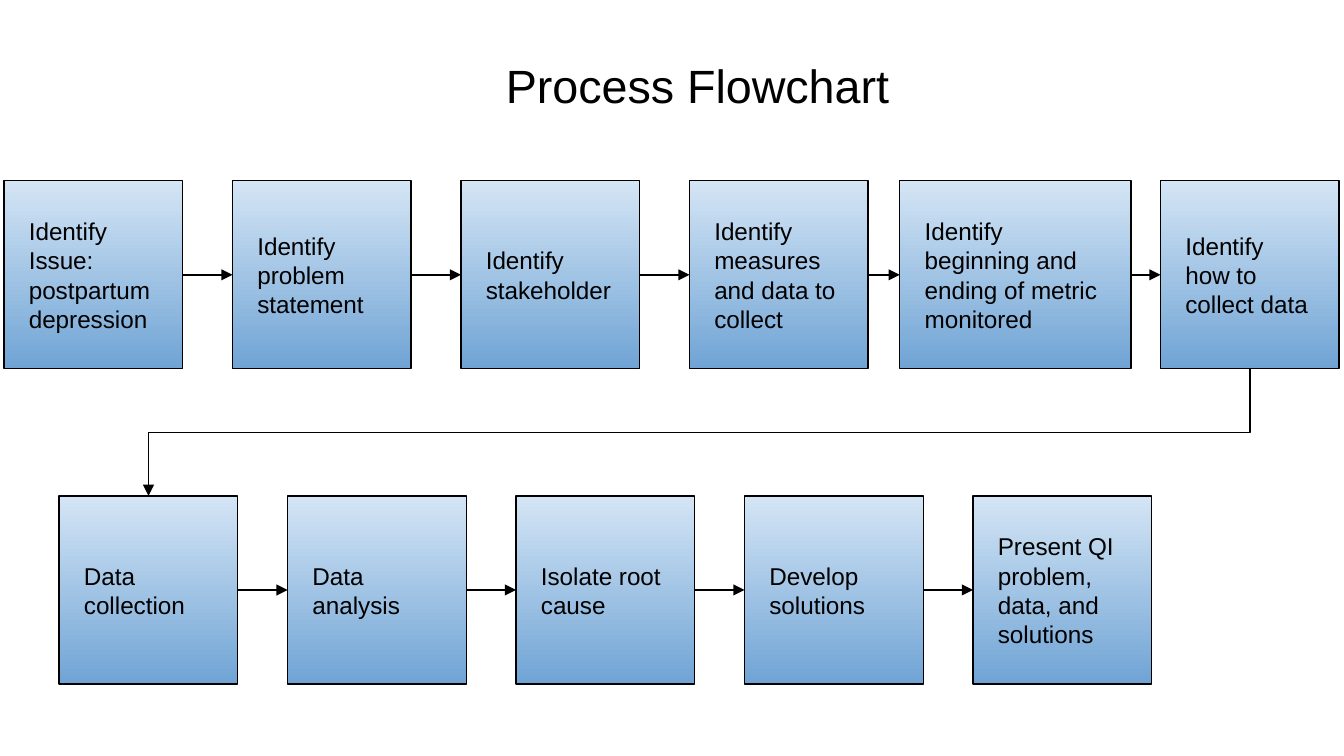
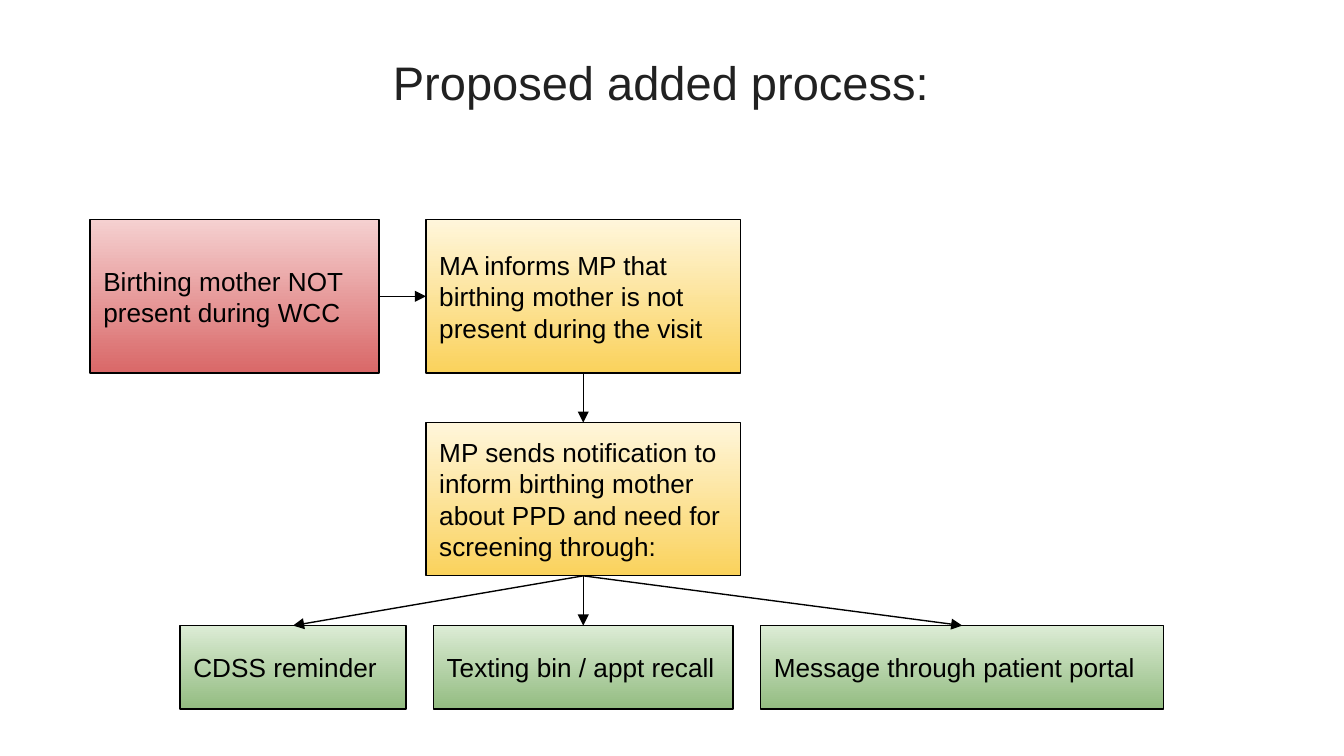
import itertools

import lxml.etree
import pptx
import pptx.dml.color
import pptx.enum.shapes
import pptx.enum.text
import pptx.oxml.ns
import pptx.util

EMU_PER_PX = 4572
FONT = "Arial"
COLORS = {
    "ink": "000000",
    "heading": "212121",
    "blue_top": "D4E5F5",
    "blue_bottom": "70A4D5",
    "red_top": "F5D0D0",
    "red_bottom": "D96868",
    "yellow_top": "FFF6DB",
    "yellow_bottom": "FAD25C",
    "green_top": "DCECD5",
    "green_bottom": "93BC81",
}
TOP, LEFT, BOTTOM, RIGHT = range(4)


def px(length):
    return pptx.util.Emu(length * EMU_PER_PX)


def rgb(name):
    return pptx.dml.color.RGBColor.from_string(COLORS[name])


def write_text(frame, text, *, size, color="ink", inset=20,
               anchor=pptx.enum.text.MSO_ANCHOR.TOP):
    frame.word_wrap = True
    frame.vertical_anchor = anchor
    frame.margin_left = frame.margin_right = px(inset)
    frame.margin_top = frame.margin_bottom = px(inset)
    paragraph = frame.paragraphs[0]
    paragraph.alignment = pptx.enum.text.PP_ALIGN.LEFT
    run = paragraph.add_run()
    run.text = text
    run.font.name = FONT
    run.font.size = pptx.util.Pt(size)
    run.font.color.rgb = rgb(color)


class FlowDeck:
    def __init__(self, width, height):
        self.deck = pptx.Presentation()
        self.deck.slide_width = px(width)
        self.deck.slide_height = px(height)
        self.slide = None

    def new_slide(self):
        self.slide = self.deck.slides.add_slide(self.deck.slide_layouts[6])

    def title(self, text, left, top, width, height, **text_format):
        box = self.slide.shapes.add_textbox(*map(px, (left, top, width, height)))
        write_text(box.text_frame, text, **text_format)

    def step(self, text, left, top, width, height, hue, **text_format):
        box = self.slide.shapes.add_shape(
            pptx.enum.shapes.MSO_SHAPE.RECTANGLE,
            *map(px, (left, top, width, height)))
        box.shadow.inherit = False
        box.fill.gradient()
        box.fill.gradient_angle = 270
        for stop, position, end in zip(box.fill.gradient_stops, (0, 1), ("top", "bottom")):
            stop.position = position
            stop.color.rgb = rgb(f"{hue}_{end}")
        box.line.color.rgb = rgb("ink")
        box.line.width = pptx.util.Pt(0.75)
        write_text(box.text_frame, text,
                   anchor=pptx.enum.text.MSO_ANCHOR.MIDDLE, **text_format)
        return box

    def style_arrow(self, arrow):
        arrow.line.color.rgb = rgb("ink")
        arrow.line.width = pptx.util.Pt(0.75)
        qn = pptx.oxml.ns.qn
        lxml.etree.SubElement(arrow.get_or_add_ln(), qn("a:tailEnd"), type="triangle")
        lxml.etree.SubElement(arrow.element.spPr, qn("a:effectLst"))

    def arrow(self, source, target, source_side=RIGHT, target_side=LEFT):
        arrow = self.slide.shapes.add_connector(
            pptx.enum.shapes.MSO_CONNECTOR.STRAIGHT, 0, 0, 0, 0)
        arrow.begin_connect(source, source_side)
        arrow.end_connect(target, target_side)
        self.style_arrow(arrow)

    def row_break(self, source, target):
        start_x = source.left + source.width // 2
        start_y = source.top + source.height
        end_x = target.left + target.width // 2
        drop, run = target.top - start_y, start_x - end_x
        left = (start_x + end_x - drop) // 2
        top = (start_y + target.top - run) // 2
        arrow = self.slide.shapes.add_connector(
            pptx.enum.shapes.MSO_CONNECTOR.ELBOW, left, top, left + drop, top + run)
        arrow.element.spPr.find(pptx.oxml.ns.qn("a:xfrm")).set("rot", "5400000")
        self.style_arrow(arrow)


def add_process(deck):
    deck.new_slide()
    pitch, usual_width = 340, 266
    first_row = [
        (text, 6 + pitch * index, usual_width)
        for index, text in enumerate((
            "Identify Issue: postpartum depression", "Identify problem statement",
            "Identify stakeholder", "Identify measures and data to collect"))
    ] + [
        ("Identify beginning and ending of metric monitored", 1339, 344),
        ("Identify how to collect data", 1727, usual_width),
    ]
    second_row = [
        (text, 88 + pitch * index, usual_width)
        for index, text in enumerate((
            "Data collection", "Data analysis", "Isolate root cause",
            "Develop solutions", "Present QI problem, data, and solutions"))
    ]
    planning, delivery = (
        [deck.step(text, left, top, width, 280, "blue", size=13, inset=37)
         for text, left, width in row]
        for row, top in ((first_row, 269), (second_row, 738)))
    for row in (planning, delivery):
        for source, target in itertools.pairwise(row):
            deck.arrow(source, target)
    deck.row_break(planning[-1], delivery[0])
    deck.title("Process Flowchart", 733, 64, 616, 124, size=25)


def add_proposal(deck):
    deck.new_slide()
    absence = deck.step("Birthing mother NOT present during WCC",
                        134, 327, 430, 228, "red", size=14)
    handoff = deck.step("MA informs MP that birthing mother is not present during the visit",
                        634, 327, 468, 228, "yellow", size=14)
    notice = deck.step("MP sends notification to inform birthing mother about PPD "
                       "and need for screening through:",
                       634, 629, 468, 228, "yellow", size=14)
    deck.arrow(absence, handoff)
    deck.arrow(handoff, notice, BOTTOM, TOP)
    for text, left, width in (
            ("CDSS reminder", 268, 336),
            ("Texting bin / appt recall", 645, 446),
            ("Message through patient portal", 1132, 600)):
        channel = deck.step(text, left, 931, width, 124, "green", size=14)
        deck.arrow(notice, channel, BOTTOM, TOP)
    deck.title("Proposed added process:", 565, 60, 848, 126, size=25.2, color="heading")


def main():
    deck = FlowDeck(2000, 1125)
    add_process(deck)
    add_proposal(deck)
    deck.deck.save("out.pptx")


if __name__ == "__main__":
    main()
